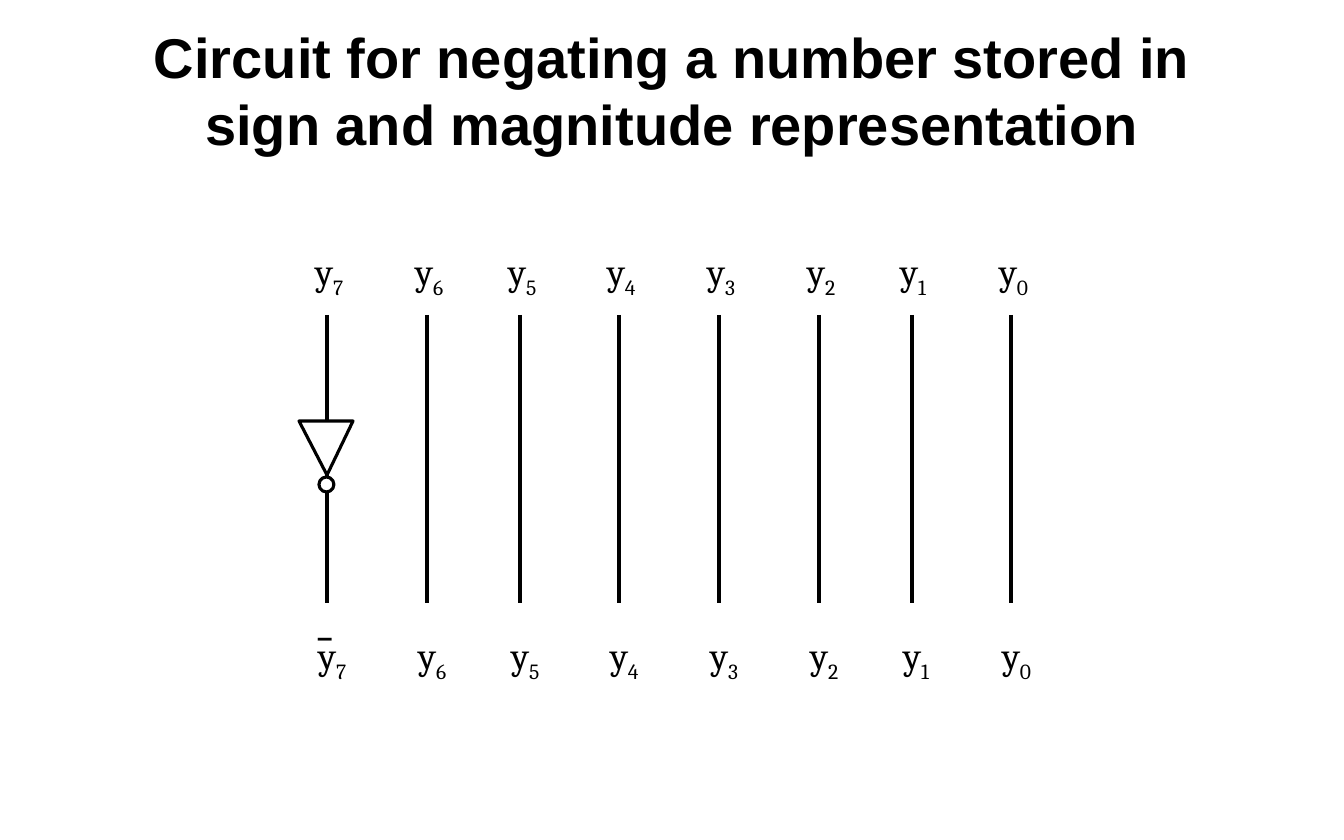
"""Build the slide showing a sign-and-magnitude negation circuit."""
from dataclasses import dataclass

from lxml import etree
from pptx import Presentation
from pptx.dml.color import RGBColor
from pptx.enum.shapes import MSO_CONNECTOR, MSO_SHAPE
from pptx.enum.text import MSO_ANCHOR, MSO_AUTO_SIZE, PP_ALIGN
from pptx.oxml.ns import qn
from pptx.shapes.base import BaseShape
from pptx.shapes.shapetree import GroupShapes
from pptx.text.text import TextFrame
from pptx.util import Emu, Pt

BLACK = RGBColor(0x00, 0x00, 0x00)
WHITE = RGBColor(0xFF, 0xFF, 0xFF)
STRAIGHT = MSO_CONNECTOR.STRAIGHT
OVAL = MSO_SHAPE.OVAL
MIDDLE = MSO_ANCHOR.MIDDLE
CENTER = PP_ALIGN.CENTER
NO_FIT = MSO_AUTO_SIZE.NONE
GROW = MSO_AUTO_SIZE.SHAPE_TO_FIT_TEXT
EMU_PER_PX = 914400 / 112
TITLE_ONLY = 5
WIRE_TOP, WIRE_BOTTOM = 315, 603
INPUT_TOP, OUTPUT_TOP, OVERBAR_TOP = 243, 627, 594
INPUT_SHIFT, OUTPUT_SHIFT = -23, -20
LABEL_WIDTH, LABEL_HEIGHT, OVERBAR_WIDTH = 54, 56, 41


@dataclass(frozen=True)
class BitWire:
    bit: str
    x: int
    negated: bool = False


WIRES = [
    BitWire("7", 327, negated=True),
    BitWire("6", 427),
    BitWire("5", 520),
    BitWire("4", 619),
    BitWire("3", 719),
    BitWire("2", 819),
    BitWire("1", 912),
    BitWire("0", 1011),
]


def px(length: int) -> Emu:
    return Emu(round(length * EMU_PER_PX))


def write_text(frame: TextFrame, text: str, *, subscript: str = "", size: int = 24,
               font: str = "Cambria", bold: bool = False) -> None:
    paragraph = frame.paragraphs[0]
    for part, baseline in ((text, 0), (subscript, -25000)):
        if not part:
            continue
        run = paragraph.add_run()
        run.text = part
        run.font.size = Pt(size)
        run.font.name = font
        run.font.bold = bold
        run.font.color.rgb = BLACK
        if baseline:
            run._r.get_or_add_rPr().set("baseline", str(baseline))


def add_label(shapes: GroupShapes, left: int, top: int, text: str, *,
              subscript: str = "", width: int = LABEL_WIDTH, bold: bool = False) -> None:
    label = shapes.add_textbox(px(left), px(top), px(width), px(LABEL_HEIGHT))
    label.text_frame.word_wrap = False
    label.text_frame.auto_size = GROW
    write_text(label.text_frame, text, subscript=subscript, bold=bold)


def add_line(shapes: GroupShapes, x: int) -> None:
    line = shapes.add_connector(STRAIGHT, px(x), px(WIRE_TOP), px(x), px(WIRE_BOTTOM))
    line.line.color.rgb = BLACK
    line.line.width = Pt(2.5)
    etree.SubElement(line._element.spPr, qn("a:effectLst"))


def style_gate(part: BaseShape) -> None:
    part.shadow.inherit = False
    part.fill.solid()
    part.fill.fore_color.rgb = WHITE
    part.line.color.rgb = BLACK
    part.line.width = Pt(2)


def add_inverter(shapes: GroupShapes, x: int) -> None:
    outline = shapes.build_freeform(x, 475, scale=EMU_PER_PX)
    outline.add_line_segments([(x - 28, 421), (x + 26, 421)], close=True)
    style_gate(outline.convert_to_shape())
    style_gate(shapes.add_shape(OVAL, px(x - 8), px(477), px(15), px(15)))


def add_wire(shapes: GroupShapes, wire: BitWire) -> None:
    add_line(shapes, wire.x)
    if wire.negated:
        add_inverter(shapes, wire.x)
    add_label(shapes, wire.x + INPUT_SHIFT, INPUT_TOP, "y", subscript=wire.bit)
    add_label(shapes, wire.x + OUTPUT_SHIFT, OUTPUT_TOP, "y", subscript=wire.bit)
    if wire.negated:
        add_label(shapes, wire.x + OUTPUT_SHIFT, OVERBAR_TOP, "_",
                  width=OVERBAR_WIDTH, bold=True)


def main() -> None:
    deck = Presentation()
    deck.slide_width, deck.slide_height = px(1344), px(840)
    slide = deck.slides.add_slide(deck.slide_layouts[TITLE_ONLY])

    title = slide.shapes.title
    title.left, title.top, title.width, title.height = px(112), px(11), px(1120), px(157)
    title.text_frame.word_wrap = True
    title.text_frame.auto_size = NO_FIT
    title.text_frame.vertical_anchor = MIDDLE
    title.text_frame.paragraphs[0].alignment = CENTER
    write_text(title.text_frame,
               "Circuit for negating a number stored in sign and magnitude representation",
               size=36, font="Arial", bold=True)

    for wire in WIRES:
        add_wire(slide.shapes.add_group_shape().shapes, wire)

    deck.save("out.pptx")


if __name__ == "__main__":
    main()
